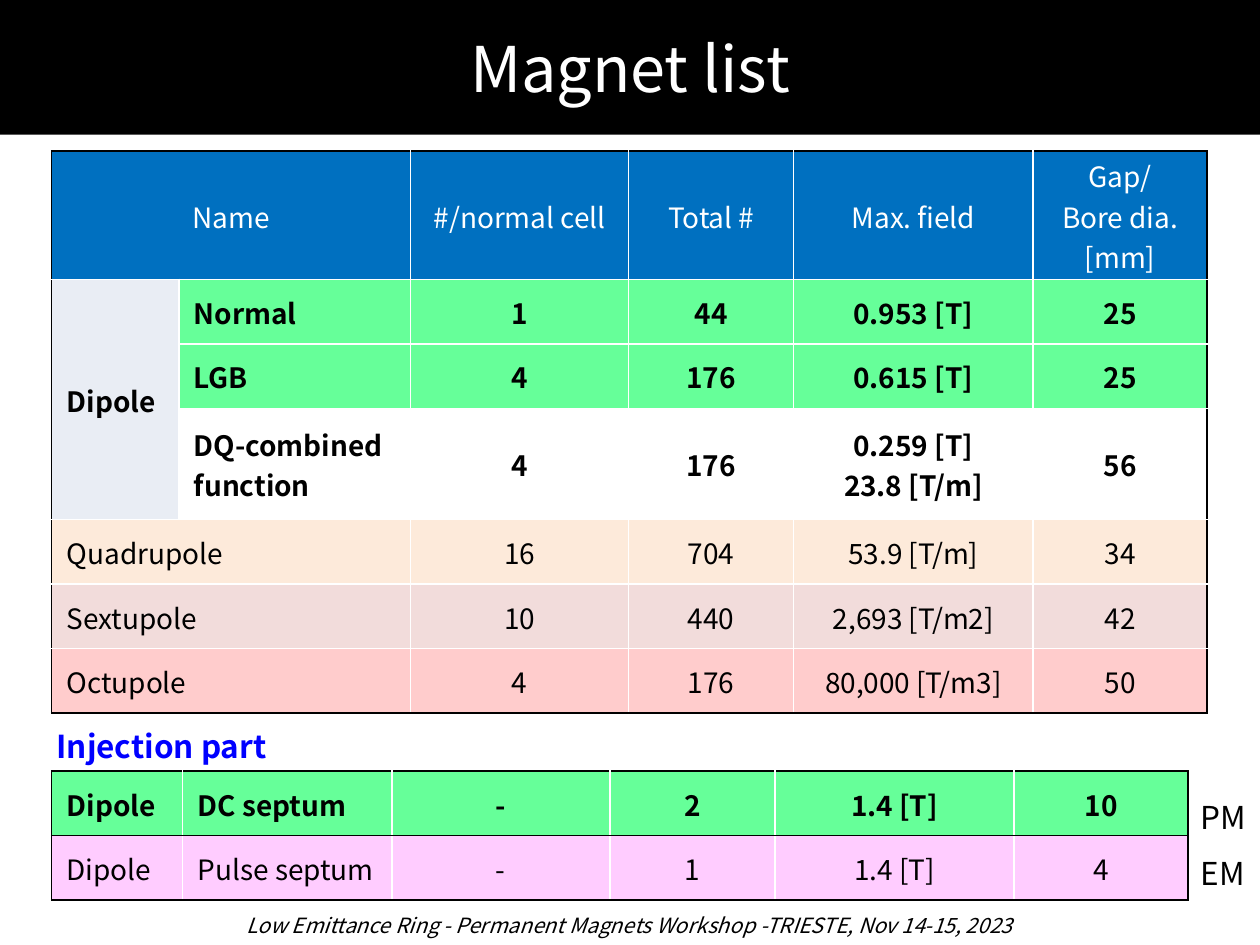
from dataclasses import dataclass

from lxml.etree import SubElement
from pptx import Presentation
from pptx.dml.color import RGBColor
from pptx.enum.text import MSO_ANCHOR, MSO_AUTO_SIZE, PP_ALIGN
from pptx.oxml.ns import qn
from pptx.util import Pt


@dataclass(frozen=True)
class Theme:
    font: str = "Noto Sans CJK JP"
    black: str = "000000"
    white: str = "FFFFFF"
    header: str = "0070C0"
    dipole: str = "E9EDF4"
    permanent: str = "66FF99"
    quadrupole: str = "FDEADA"
    sextupole: str = "F2DCDB"
    octupole: str = "FFCCCC"
    pulsed: str = "FFCCFF"
    heading: str = "0000FF"
    title_size: float = 36
    label_size: float = 18
    table_size: float = 16
    footer_size: float = 12


THEME = Theme()

TABLE_LEFT = 29.5
NAME_COLUMNS = 2
VALUE_WIDTHS = [124.6, 94.3, 136.8, 99.4]
ROW_HEIGHT = 36.9

# Each row: fill, bold, cell texts (empty where a merged cell covers it)
MAGNET_ROWS = [
    (THEME.header, False, ["Name", "", "#/normal cell", "Total #", "Max. field",
                           "Gap/\nBore dia. [mm]"]),
    (THEME.permanent, True, ["Dipole", "Normal", "1", "44", "0.953 [T]", "25"]),
    (THEME.permanent, True, ["", "LGB", "4", "176", "0.615 [T]", "25"]),
    (THEME.white, True, ["", "DQ-combined function", "4", "176",
                         "0.259 [T]\v23.8 [T/m]", "56"]),
    (THEME.quadrupole, False, ["Quadrupole", "", "16", "704", "53.9 [T/m]", "34"]),
    (THEME.sextupole, False, ["Sextupole", "", "10", "440", "2,693 [T/m2]", "42"]),
    (THEME.octupole, False, ["Octupole", "", "4", "176", "80,000 [T/m3]", "50"]),
]
INJECTION_ROWS = [
    (THEME.permanent, True, ["Dipole", "DC septum", "-", "2", "1.4 [T]", "10"]),
    (THEME.pulsed, False, ["Dipole", "Pulse septum", "-", "1", "1.4 [T]", "4"]),
]


def write_text(text_frame, text, size, color, align=PP_ALIGN.LEFT, spacing=None,
               bold=False, italic=False):
    text_frame.text = text
    font_format = {"name": THEME.font, "size": Pt(size), "bold": bold, "italic": italic}
    for paragraph in text_frame.paragraphs:
        paragraph.alignment = align
        if spacing:
            paragraph.line_spacing = spacing
        for run in paragraph.runs:
            for name, value in font_format.items():
                setattr(run.font, name, value)
            run.font.color.rgb = RGBColor.from_string(color)


def add_title(slide, text):
    title = slide.shapes.title
    frame = {"left": 0, "top": 0, "width": Pt(720), "height": Pt(77)}
    for name, value in frame.items():
        setattr(title, name, value)
    title.fill.solid()
    title.fill.fore_color.rgb = RGBColor.from_string(THEME.black)
    title.text_frame.vertical_anchor = MSO_ANCHOR.MIDDLE
    write_text(title.text_frame, text, THEME.title_size, THEME.white, PP_ALIGN.CENTER)


def add_label(slide, text, left, top, width, height, size, color, **text_format):
    box = slide.shapes.add_textbox(Pt(left), Pt(top), Pt(width), Pt(height))
    box.text_frame.word_wrap = True
    box.text_frame.auto_size = MSO_AUTO_SIZE.SHAPE_TO_FIT_TEXT
    write_text(box.text_frame, text, size, color, **text_format)


def set_borders(cell, colors):
    properties = cell._tc.get_or_add_tcPr()
    for side, color in colors.items():
        line = SubElement(properties, qn(f"a:ln{side}"), w=str(Pt(1)))
        SubElement(SubElement(line, qn("a:solidFill")), qn("a:srgbClr"), val=color)


def fill_cell(cell, color):
    cell.fill.solid()
    cell.fill.fore_color.rgb = RGBColor.from_string(color)


def add_magnet_table(slide, rows, top, name_widths, heights, row_line):
    """Black outer frame, white column lines and row lines in row_line."""
    widths = name_widths + VALUE_WIDTHS
    table = slide.shapes.add_table(
        len(rows), len(widths), Pt(TABLE_LEFT), Pt(top), Pt(sum(widths)), Pt(sum(heights))
    ).table
    table.first_row = table.horz_banding = False
    for column, width in zip(table.columns, widths):
        column.width = Pt(width)
    for row, height in zip(table.rows, heights):
        row.height = Pt(height)

    last_row, last_column = len(rows) - 1, len(widths) - 1
    for row_index, (fill, bold, texts) in enumerate(rows):
        is_header = fill == THEME.header
        for column_index, text in enumerate(texts):
            cell = table.cell(row_index, column_index)
            is_name = column_index < NAME_COLUMNS and not is_header
            cell_format = {
                "vertical_anchor": MSO_ANCHOR.MIDDLE,
                "margin_left": Pt(8.6 if is_name else 0.7),
                "margin_top": Pt(0.7),
                "margin_right": Pt(0.7),
                "margin_bottom": 0,
            }
            for name, value in cell_format.items():
                setattr(cell, name, value)
            set_borders(cell, {
                "L": THEME.black if column_index == 0 else THEME.white,
                "R": THEME.black if column_index == last_column else THEME.white,
                "T": THEME.black if row_index == 0 else row_line,
                "B": THEME.black if row_index == last_row else row_line,
            })
            fill_cell(cell, fill)
            if text:
                write_text(cell.text_frame, text, THEME.table_size,
                           THEME.white if is_header else THEME.black,
                           PP_ALIGN.LEFT if is_name else PP_ALIGN.CENTER, bold=bold)
    return table


def main():
    presentation = Presentation()
    presentation.slide_width, presentation.slide_height = Pt(720), Pt(540)
    slide = presentation.slides.add_slide(presentation.slide_layouts[5])
    add_title(slide, "Magnet list")

    # Ring magnets
    heights = [73.2, ROW_HEIGHT, ROW_HEIGHT, 63.5] + [ROW_HEIGHT] * 3
    magnets = add_magnet_table(slide, MAGNET_ROWS, 86.4, [72.7, 132.5], heights, THEME.white)
    for row_index in (0, 4, 5, 6):
        magnets.cell(row_index, 0).merge(magnets.cell(row_index, 1))
    magnets.cell(1, 0).merge(magnets.cell(3, 0))
    fill_cell(magnets.cell(1, 0), THEME.dipole)

    # Injection magnets
    add_magnet_table(slide, INJECTION_ROWS, 440.6, [74.9, 119.5], [ROW_HEIGHT] * 2,
                     THEME.black)
    add_label(slide, "Injection part", 25.2, 411.8, 360, 29, THEME.label_size,
              THEME.heading, bold=True)
    add_label(slide, "PM\nEM", 679, 441.4, 51, 68.4, THEME.label_size, THEME.black,
              spacing=1.5)

    # Footer
    add_label(slide, "Low Emittance Ring - Permanent Magnets Workshop -TRIESTE, Nov 14-15, 2023",
              0, 517.7, 720, 21.6, THEME.footer_size, THEME.black,
              align=PP_ALIGN.CENTER, italic=True)

    presentation.save("out.pptx")


if __name__ == "__main__":
    main()
